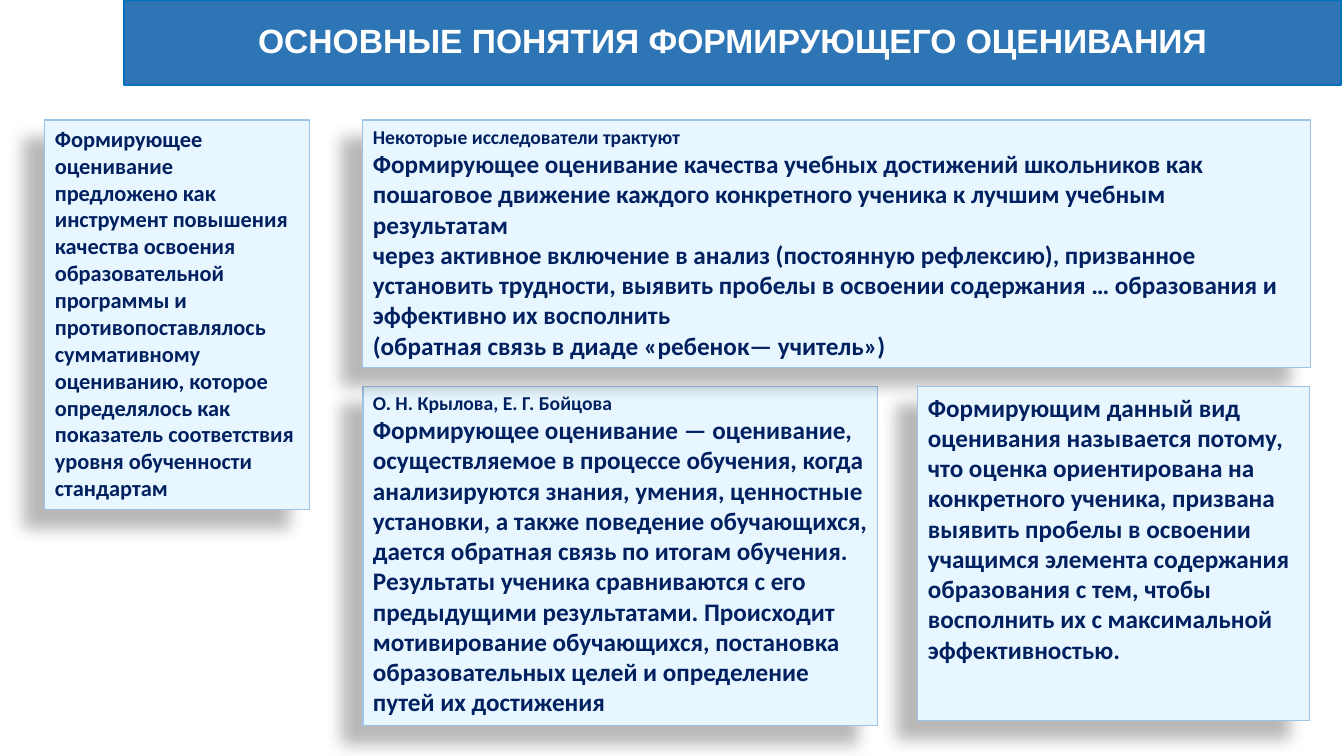
from lxml.etree import SubElement
from pptx import Presentation
from pptx.dml.color import RGBColor
from pptx.enum.shapes import MSO_SHAPE
from pptx.enum.text import MSO_ANCHOR, PP_ALIGN
from pptx.oxml.ns import qn
from pptx.util import Emu, Pt

PX = 12192000 / 1344
COLORS = {
    "banner": "2E75B6", "banner_line": "0070C0", "banner_text": "FFFFFF",
    "card": "E7F6FF", "card_line": "9DC3E6", "card_text": "002060",
    "shadow": "000000",
}
TITLE = "ОСНОВНЫЕ ПОНЯТИЯ ФОРМИРУЮЩЕГО ОЦЕНИВАНИЯ"

# (left, top, width, height), [(text, size), ...], from back to front
CARDS = [
    ((363, 386, 515, 340), [
        ("О. Н. Крылова, Е. Г. Бойцова", 14),
        ("Формирующее оценивание — оценивание, осуществляемое в процессе "
         "обучения, когда анализируются знания, умения, ценностные установки, "
         "а также поведение обучающихся, дается обратная связь по итогам "
         "обучения.", 18),
        ("Результаты ученика сравниваются с его предыдущими результатами. "
         "Происходит мотивирование обучающихся, постановка образовательных "
         "целей и определение путей их достижения", 18),
    ]),
    ((363, 120, 948, 248), [
        ("Некоторые исследователи трактуют", 14),
        ("Формирующее оценивание качества учебных достижений школьников как", 18),
        ("пошаговое движение каждого конкретного ученика к лучшим учебным "
         "результатам", 18),
        ("через активное включение в анализ (постоянную рефлексию), призванное "
         "установить трудности, выявить пробелы в освоении содержания … "
         "образования и эффективно их восполнить", 18),
        ("(обратная связь в диаде «ребенок— учитель»)", 18),
    ]),
    ((45, 120, 265, 390), [
        ("Формирующее оценивание предложено как инструмент повышения качества "
         "освоения образовательной программы и противопоставлялось "
         "суммативному оцениванию, которое определялось как показатель "
         "соответствия уровня обученности стандартам", 16),
    ]),
    ((918, 387, 392, 334), [
        ("Формирующим данный вид оценивания называется потому, что оценка "
         "ориентирована на конкретного ученика, призвана выявить пробелы в "
         "освоении учащимся элемента содержания образования с тем, чтобы "
         "восполнить их с максимальной эффективностью.", 18),
    ]),
]


def px(n):
    return Emu(round(n * PX))


def color(name):
    return RGBColor.from_string(COLORS[name])


def add_panel(slide, box, style, line_width):
    sp = slide.shapes.add_shape(MSO_SHAPE.RECTANGLE, *map(px, box))
    sp.shadow.inherit = False
    sp.fill.solid()
    sp.fill.fore_color.rgb = color(style)
    sp.line.color.rgb = color(f"{style}_line")
    sp.line.width = Pt(line_width)
    sp.text_frame.word_wrap = True
    return sp


def add_text(p, text, size, font, color_name):
    r = p.add_run()
    r.text = text
    r.font.size = Pt(size)
    r.font.name = font
    r.font.bold = True
    r.font.color.rgb = color(color_name)


def add_shadow(sp):
    """Cast a soft shadow towards the lower left."""
    effects = sp._element.spPr.find(qn("a:effectLst"))
    shadow = SubElement(effects, qn("a:outerShdw"), blurRad=str(Pt(11.8)),
                        dist=str(Pt(19.7)), dir=str(141 * 60000),
                        algn="ctr", rotWithShape="0")
    clr = SubElement(shadow, qn("a:srgbClr"), val=COLORS["shadow"])
    SubElement(clr, qn("a:alpha"), val="28000")


def add_banner(slide, box, text):
    sp = add_panel(slide, box, "banner", 1)
    tf = sp.text_frame
    tf.vertical_anchor = MSO_ANCHOR.MIDDLE
    p = tf.paragraphs[0]
    p.alignment = PP_ALIGN.CENTER
    p.line_spacing = 0.9
    add_text(p, text, 24, "Arial", "banner_text")


def add_card(slide, box, paragraphs):
    sp = add_panel(slide, box, "card", 0.75)
    add_shadow(sp)
    tf = sp.text_frame
    tf.vertical_anchor = MSO_ANCHOR.TOP
    for i, (text, size) in enumerate(paragraphs):
        p = tf.add_paragraph() if i else tf.paragraphs[0]
        p.alignment = PP_ALIGN.LEFT
        add_text(p, text, size, "Calibri", "card_text")


def main():
    prs = Presentation()
    prs.slide_width, prs.slide_height = px(1344), px(756)
    slide = prs.slides.add_slide(prs.slide_layouts[6])
    add_banner(slide, (124, 0, 1217, 85), TITLE)
    for box, paragraphs in CARDS:
        add_card(slide, box, paragraphs)
    prs.save("out.pptx")


if __name__ == "__main__":
    main()
